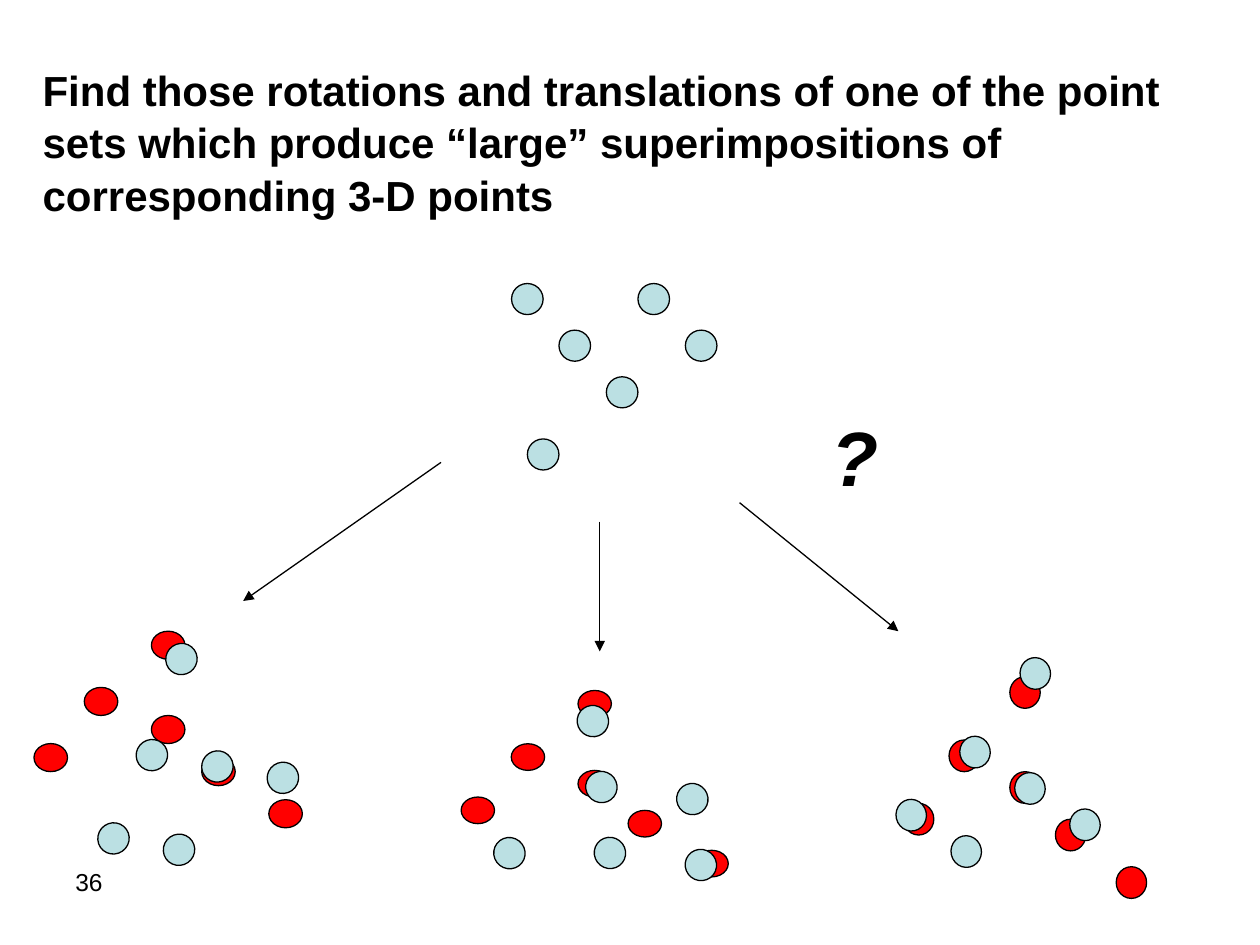
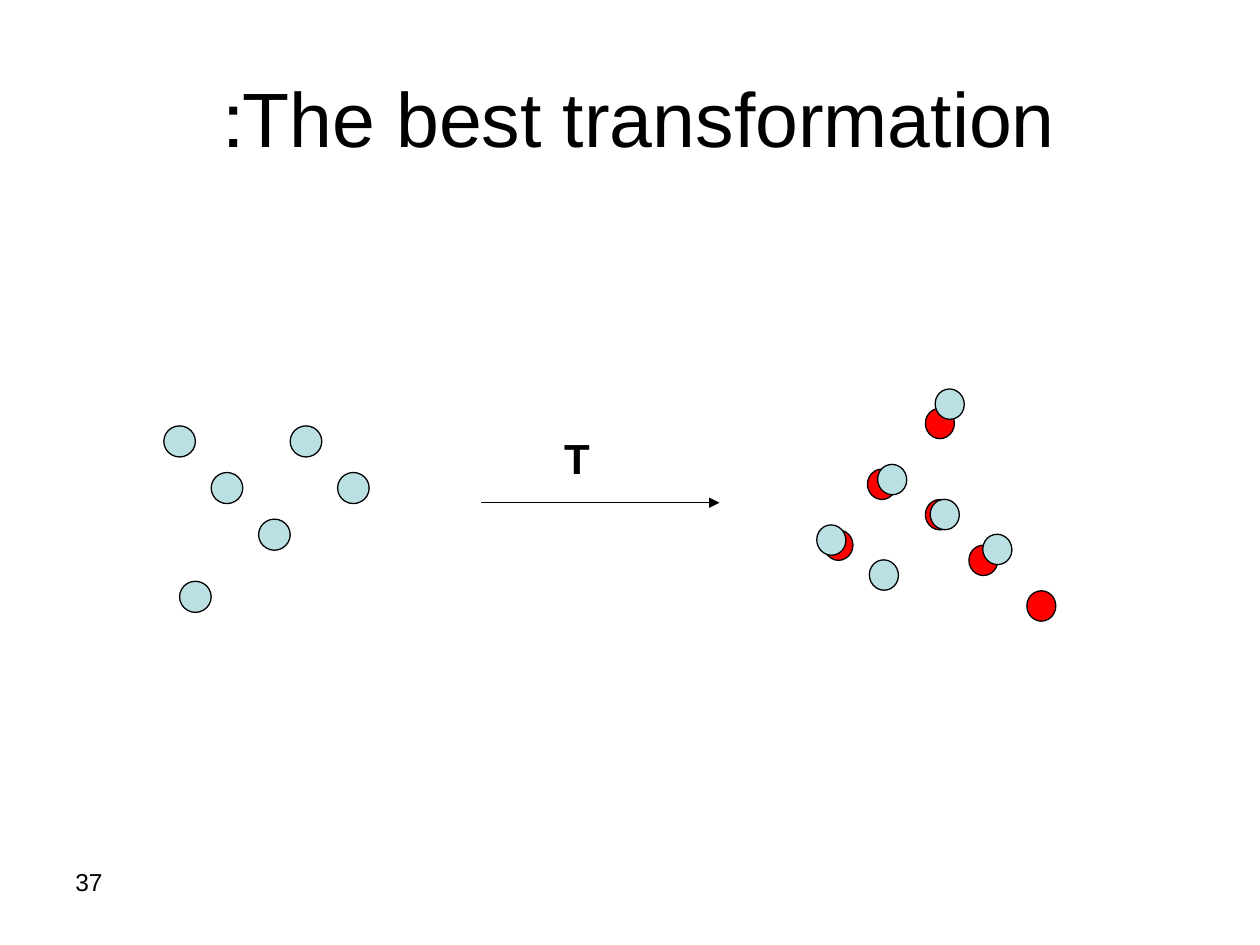
import math

from lxml import etree
from pptx import Presentation
from pptx import util as u
from pptx.dml.color import RGBColor
from pptx.enum import shapes, text
from pptx.oxml.ns import qn

# Shared look: the slide is a grid of 100 columns by 75 rows
COLUMNS, ROWS = 100, 75
SLIDE_WIDTH, SLIDE_HEIGHT = u.Inches(10), u.Inches(7.5)
COLORS = {"ink": "000000", "model": "BBE0E3", "target": "FF0000"}
FONT = "Arial"
LINE_WIDTH = u.Pt(0.75)

# Point sets in steps of their own lattice
MODEL_POINTS = [(0, 0), (3, 3), (6, 6), (1, 10), (8, 0), (11, 3)]
MODEL_STEPS = (13, 12)
MODEL_DOT = (2, 2)
TARGET_POINTS = [(3, 2), (0, 4), (7, 0), (7, 3), (10, 4.5), (14, 6)]
TARGET_STEPS = (16, 7)
TARGET_DOT = (2, 1)


def across(columns):
    return round(SLIDE_WIDTH * columns / COLUMNS)


def down(rows):
    return round(SLIDE_HEIGHT * rows / ROWS)


def color(name):
    return RGBColor.from_string(COLORS[name])


def add_text(slide, content, left, top, width, height, size=24, bold=False,
             italic=False, align=text.PP_ALIGN.LEFT, anchor=text.MSO_ANCHOR.TOP,
             spacing=1.0, right_to_left=False, wrap=True):
    box = slide.shapes.add_textbox(across(left), down(top), across(width), down(height))
    frame = box.text_frame
    frame.word_wrap = wrap
    frame.vertical_anchor = anchor
    paragraph = frame.paragraphs[0]
    paragraph.alignment = align
    paragraph.line_spacing = spacing
    if right_to_left:
        paragraph._p.get_or_add_pPr().set("rtl", "1")
    run = paragraph.add_run()
    run.text = content
    font = run.font
    font.name, font.size, font.bold, font.italic = FONT, u.Pt(size), bold, italic
    font.color.rgb = color("ink")


def add_page_number(slide, number):
    add_text(slide, str(number), 5, 68.3, 23.3, 5.2, size=14)


def add_arrow(slide, start, end):
    arrow = slide.shapes.add_connector(
        shapes.MSO_CONNECTOR.STRAIGHT,
        across(start[0]), down(start[1]), across(end[0]), down(end[1]))
    arrow.line.color.rgb = color("ink")
    arrow.line.width = LINE_WIDTH
    etree.SubElement(arrow.line._get_or_add_ln(), qn("a:tailEnd"), type="triangle")
    etree.SubElement(arrow._element.spPr, qn("a:effectLst"))


def add_point_set(slide, points, steps, dot, fill, origin, size, angle=0):
    """Scale the lattice to size, turn it about the origin and draw its dots."""
    group = slide.shapes.add_group_shape()
    step_x, step_y = size[0] / steps[0], size[1] / steps[1]
    cosine, sine = math.cos(math.radians(angle)), math.sin(math.radians(angle))
    for column, row in points:
        x, y = column * step_x, row * step_y
        left = origin[0] + x * cosine - y * sine
        top = origin[1] + x * sine + y * cosine
        shape = group.shapes.add_shape(
            shapes.MSO_SHAPE.OVAL, across(left), down(top),
            across(dot[0] * step_x), down(dot[1] * step_y))
        shape.rotation = angle
        shape.shadow.inherit = False
        shape.fill.solid()
        shape.fill.fore_color.rgb = color(fill)
        shape.line.color.rgb = color("ink")
        shape.line.width = LINE_WIDTH


def add_model(slide, first_dot, size=(16.3, 14.8), angle=0):
    add_point_set(slide, MODEL_POINTS, MODEL_STEPS, MODEL_DOT, "model",
                  first_dot, size, angle)


def add_target(slide, corner, size):
    add_point_set(slide, TARGET_POINTS, TARGET_STEPS, TARGET_DOT, "target", corner, size)


def build_search_slide(slide):
    add_page_number(slide, 36)
    add_text(slide, "Find those rotations and translations of one of the point sets "
             "which produce “large” superimpositions of corresponding 3-D points",
             2.4, 4.4, 97.6, 13, bold=True, spacing=1.05)

    # The model and its three candidate placements
    for start, end in [((35, 36.7), (19.3, 47.7)),
                       ((47.6, 41.4), (47.6, 51.7)),
                       ((58.7, 39.9), (71.3, 50.1))]:
        add_arrow(slide, start, end)
    add_model(slide, (40.6, 22.5))
    add_text(slide, "?", 65, 32, 5.7, 8.3, size=44, bold=True, italic=True,
             align=text.PP_ALIGN.CENTER)

    # Right, middle and left superimpositions
    add_target(slide, (71.7, 53.7), (19.3, 17.6))
    add_model(slide, (84.9, 64.2), (15.7, 15.1), angle=167.3)
    add_target(slide, (36.6, 54.8), (21.2, 14.8))
    add_model(slide, (45.8, 56), angle=38.1)
    add_target(slide, (2.7, 50.1), (21.3, 15.6))
    add_model(slide, (21.2, 60.5), angle=145.3)


def build_best_slide(slide):
    add_page_number(slide, 37)
    add_text(slide, "The best transformation: ", 5, 3, 90, 12.5, size=44,
             align=text.PP_ALIGN.CENTER, anchor=text.MSO_ANCHOR.MIDDLE,
             right_to_left=True)

    # The model, the transformation T and the best superimposition
    add_target(slide, (65.4, 32.4), (18.4, 16.9))
    add_model(slide, (78, 42.4), (15, 14.5), angle=167.3)
    add_model(slide, (13, 33.8))
    add_arrow(slide, (38.2, 39.9), (57.1, 39.9))
    add_text(slide, "T", 43.8, 33.8, 4, 5, bold=True, align=text.PP_ALIGN.RIGHT,
             right_to_left=True, wrap=False)


def main():
    presentation = Presentation()
    presentation.slide_width, presentation.slide_height = SLIDE_WIDTH, SLIDE_HEIGHT
    blank = presentation.slide_layouts[6]
    for build in (build_search_slide, build_best_slide):
        build(presentation.slides.add_slide(blank))
    presentation.save("out.pptx")


if __name__ == "__main__":
    main()
